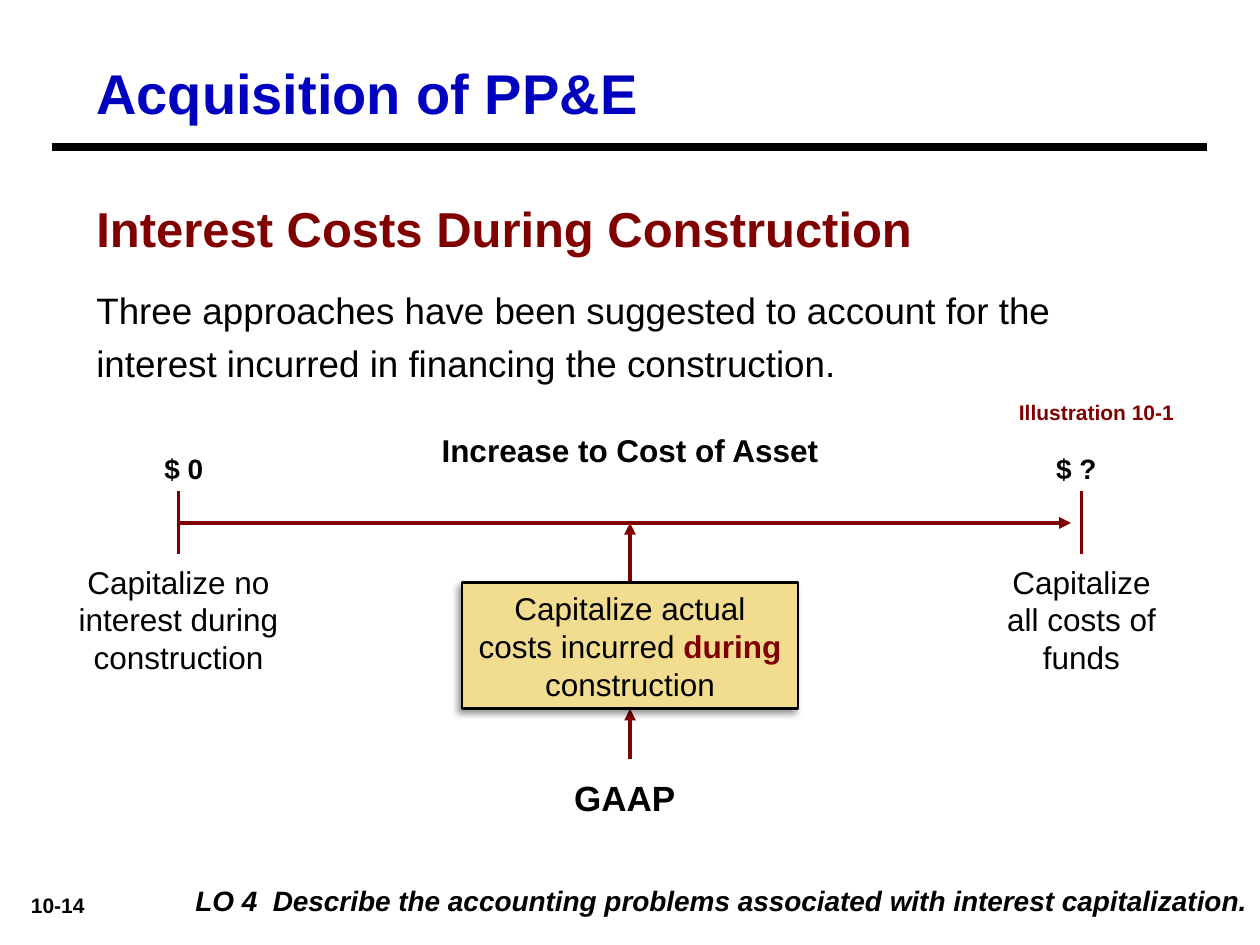
from dataclasses import dataclass

from lxml import etree
from pptx import Presentation, util as u
from pptx.dml.color import RGBColor
from pptx.enum import shapes, text
from pptx.oxml import parse_xml
from pptx.oxml.ns import nsdecls, qn

# Grid of 120 columns by 90 rows, each cell a twelfth of an inch
COLUMNS, ROWS = 120, 90
CELL = u.Inches(10) / COLUMNS

BLACK = RGBColor(0x00, 0x00, 0x00)
WHITE = RGBColor(0xFF, 0xFF, 0xFF)
MAROON = RGBColor(0x80, 0x00, 0x00)
BLUE = RGBColor(0x00, 0x00, 0xBF)
GOLD = RGBColor(0xF1, 0xDC, 0x8F)

LEFT, CENTER, RIGHT = text.PP_ALIGN.LEFT, text.PP_ALIGN.CENTER, text.PP_ALIGN.RIGHT

# Axis geometry, in columns and rows
AXIS_START, AXIS_MIDDLE, AXIS_END = 17, 60, 103
AXIS_ROW = 49.8
BOX_TOP, BOX_BOTTOM = 55.5, 67.5


@dataclass(frozen=True)
class Label:
    words: str
    column: float
    row: float
    columns: float
    rows: float
    size: float
    bold: bool = False
    italic: bool = False
    color: RGBColor = BLACK
    align: text.PP_ALIGN = CENTER
    spacing: float = 1.0
    fill: RGBColor | None = None


@dataclass(frozen=True)
class Line:
    start: tuple[float, float]
    end: tuple[float, float]
    arrow: bool = False
    color: RGBColor = MAROON
    width: float = 2.25


LABELS = [
    # Headings and introduction
    Label("Acquisition of PP&E", 8, 5, 108, 7.3, 32, bold=True, color=BLUE, align=LEFT),
    Label("Interest Costs During Construction", 8, 18, 105, 7.1, 28,
          bold=True, color=MAROON, align=LEFT, spacing=1.05),
    Label("Three approaches have been suggested to account for the interest "
          "incurred in financing the construction.", 8, 26, 103.2, 11.4, 21,
          align=LEFT, spacing=1.2),
    # Axis captions
    Label("Illustration 10-1", 92, 37.5, 21, 3.6, 12, bold=True, color=MAROON, align=RIGHT),
    Label("Increase to Cost of Asset", 40, 40.5, 40, 4.8, 18, bold=True),
    Label("$ 0", 13, 42.4, 9, 4.4, 16, bold=True),
    Label("$ ?", 98, 42.4, 9, 4.4, 16, bold=True),
    Label("Capitalize no interest during construction", 6, 53, 22, 12, 18),
    Label("Capitalize all costs of funds", 94, 53, 18, 12, 18),
    Label("GAAP", 53, 73.4, 13, 5.3, 20, bold=True),
    # Footer
    Label("LO 4  Describe the accounting problems associated with interest capitalization.",
          12, 83.6, 108, 4.4, 16, bold=True, italic=True, align=RIGHT, fill=WHITE),
    Label("10-14", 1, 84.4, 9, 3.6, 12, bold=True),
]

LINES = [
    Line((5, 14), (115, 14), color=BLACK, width=4.5),
    Line((AXIS_START, AXIS_ROW), (AXIS_END - 1, AXIS_ROW), arrow=True),
    Line((AXIS_MIDDLE, BOX_TOP), (AXIS_MIDDLE, AXIS_ROW), arrow=True),
    Line((AXIS_MIDDLE, 72.3), (AXIS_MIDDLE, BOX_BOTTOM), arrow=True),
    *(Line((column, 46.8), (column, 52.8)) for column in (AXIS_START, AXIS_END)),
]


def cells(*counts: float) -> list[int]:
    return [round(count * CELL) for count in counts]


def format_run(run, size: float, color: RGBColor, bold: bool, italic: bool = False) -> None:
    font = run.font
    font.name, font.size = "Arial", u.Pt(size)
    font.bold, font.italic = bold, italic
    font.color.rgb = color


def draw_label(slide, label: Label) -> None:
    shape = slide.shapes.add_textbox(
        *cells(label.column, label.row, label.columns, label.rows))
    if label.fill is not None:
        shape.fill.solid()
        shape.fill.fore_color.rgb = label.fill
    frame = shape.text_frame
    frame.word_wrap = True
    frame.text = label.words
    paragraph = frame.paragraphs[0]
    paragraph.alignment = label.align
    paragraph.line_spacing = label.spacing
    format_run(paragraph.runs[0], label.size, label.color, label.bold, label.italic)


def draw_line(slide, line: Line) -> None:
    connector = slide.shapes.add_connector(
        shapes.MSO_CONNECTOR.STRAIGHT, *cells(*line.start, *line.end))
    connector.line.color.rgb = line.color
    connector.line.width = u.Pt(line.width)
    properties = connector._element.spPr
    if line.arrow:
        etree.SubElement(properties.find(qn("a:ln")), qn("a:tailEnd"), type="triangle")
    etree.SubElement(properties, qn("a:effectLst"))


def draw_gaap_box(slide) -> None:
    shape = slide.shapes.add_shape(
        shapes.MSO_SHAPE.RECTANGLE, *cells(44, BOX_TOP, 32, BOX_BOTTOM - BOX_TOP))
    shape.fill.solid()
    shape.fill.fore_color.rgb = GOLD
    shape.line.color.rgb = BLACK
    shape.line.width = u.Pt(1.5)
    # Soft shadow towards the lower left
    shape._element.spPr.append(parse_xml(
        f'<a:effectLst {nsdecls("a")}>'
        f'<a:outerShdw blurRad="{u.Pt(4)}" dist="{u.Pt(3)}" dir="{135 * 60000}">'
        '<a:srgbClr val="000000"><a:alpha val="40000"/></a:srgbClr>'
        '</a:outerShdw></a:effectLst>'))
    frame = shape.text_frame
    frame.word_wrap = True
    frame.vertical_anchor = text.MSO_ANCHOR.TOP
    paragraph = frame.paragraphs[0]
    paragraph.alignment = CENTER
    for words, color, bold in (("Capitalize actual costs incurred ", BLACK, False),
                               ("during", MAROON, True),
                               (" construction", BLACK, False)):
        run = paragraph.add_run()
        run.text = words
        format_run(run, 18, color, bold)


def main() -> None:
    presentation = Presentation()
    presentation.slide_width, presentation.slide_height = cells(COLUMNS, ROWS)
    slide = presentation.slides.add_slide(presentation.slide_layouts[6])
    for label in LABELS:
        draw_label(slide, label)
    for line in LINES:
        draw_line(slide, line)
    draw_gaap_box(slide)
    presentation.save("out.pptx")


if __name__ == "__main__":
    main()
